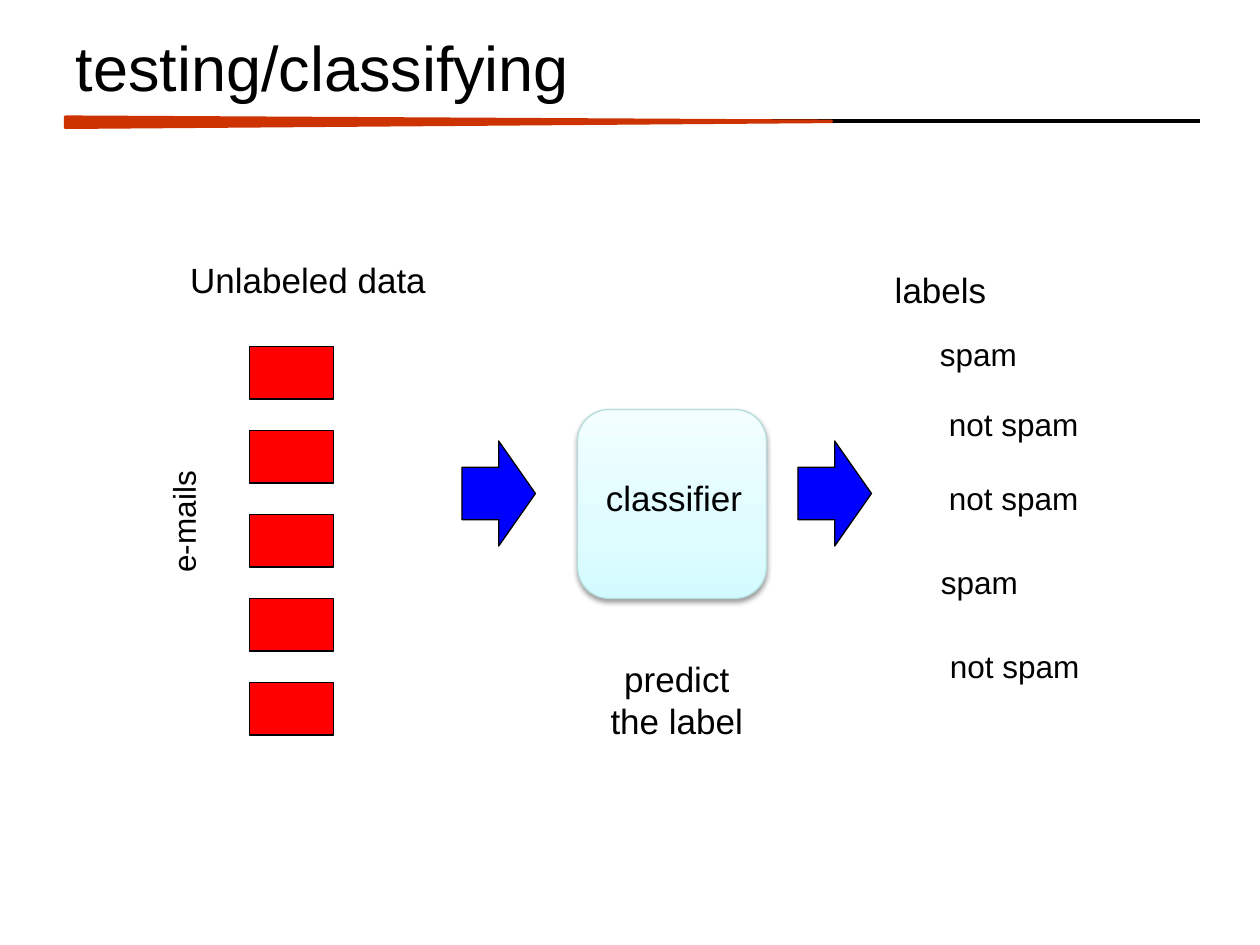
"""Build the slide that shows a classifier labelling unlabeled e-mails."""
from copy import deepcopy
from dataclasses import dataclass

from lxml.etree import SubElement
from pptx import Presentation
from pptx.dml.color import RGBColor
from pptx.enum.shapes import MSO_CONNECTOR as Connector, MSO_SHAPE as Preset
from pptx.enum.text import MSO_ANCHOR as Anchor, MSO_AUTO_SIZE as AutoSize, PP_ALIGN as Align
from pptx.oxml.ns import qn
from pptx.util import Inches, Length, Pt

BLACK = RGBColor(0x00, 0x00, 0x00)
RED = RGBColor(0xFF, 0x00, 0x00)
BLUE = RGBColor(0x00, 0x00, 0xFF)
RUST = RGBColor(0xCC, 0x33, 0x00)
AQUA_EDGE = RGBColor(0xB6, 0xDC, 0xDF)
AQUA_STOPS = (
    (0, RGBColor(0xD3, 0xFB, 0xFF)),
    (0.35, RGBColor(0xDF, 0xFC, 0xFF)),
    (1, RGBColor(0xF2, 0xFE, 0xFF)),
)
FONT = "Arial"
UNITS_PER_INCH = 12
EMAIL_COUNT = 5
EMAIL_PITCH = 8


@dataclass(frozen=True)
class Box:
    """Place on a grid of twelve units to the inch."""

    col: float
    row: float
    cols: float
    rows: float

    def emu(self) -> tuple[Length, ...]:
        """Return left, top, width and height as lengths."""
        return tuple(map(grid, (self.col, self.row, self.cols, self.rows)))


@dataclass(frozen=True)
class Caption:
    """Text with its place, size and rotation."""

    text: str
    box: Box
    size: int = 20
    rotation: int = 0


CAPTIONS = (
    Caption("Unlabeled data", Box(16.8, 24, 25.08, 5.25)),
    Caption("predict\nthe label", Box(56.9, 62, 15.12, 9.25)),
    Caption("labels", Box(84, 25, 11.16, 5.25)),
    Caption("e-mails", Box(10.32, 46.7, 15.48, 6), 18, 270),
)
PREDICTIONS = (
    ("spam", 87, 31.3),
    ("not spam", 87, 38),
    ("not spam", 87, 45),
    ("spam", 87.1, 53),
    ("not spam", 87.1, 61),
)
PREDICTION_COLS = {"spam": 12.36, "not spam": 19.08}
CLASSIFIER = Caption("classifier", Box(56.4, 44.8, 15.6, 5.25))


def grid(units: float) -> Length:
    """Turn grid units into a length."""
    return Inches(units / UNITS_PER_INCH)


def write(frame, text: str, *, size: int, align=Align.CENTER, anchor=Anchor.TOP,
          wrap: bool = False, fit=AutoSize.SHAPE_TO_FIT_TEXT) -> None:
    """Write one paragraph per line of text in the given format."""
    frame.text = text
    frame.word_wrap = wrap
    frame.auto_size = fit
    frame.vertical_anchor = anchor
    for paragraph in frame.paragraphs:
        paragraph.alignment = align
        font = paragraph.runs[0].font
        font.name, font.size = FONT, Pt(size)
        font.color.rgb = BLACK


def add_caption(shapes, caption: Caption) -> None:
    """Add a text box that grows with its text."""
    label = shapes.add_textbox(*caption.box.emu())
    label.rotation = caption.rotation
    write(label.text_frame, caption.text, size=caption.size)


def add_block(shapes, preset: Preset, box: Box, fill: RGBColor | None,
              edge: RGBColor = BLACK, edge_width: float = 0.75):
    """Add a preset shape without a shadow and return it."""
    block = shapes.add_shape(preset, *box.emu())
    block.shadow.inherit = False
    if fill is not None:
        block.fill.solid()
        block.fill.fore_color.rgb = fill
    block.line.color.rgb = edge
    block.line.width = Pt(edge_width)
    return block


def add_title(slide) -> None:
    """Place the title and the tapering rule under it."""
    title = slide.shapes.title
    title.left, title.top, title.width, title.height = Box(6, 2.04, 108, 8.64).emu()
    write(title.text_frame, "testing/classifying", size=36, align=Align.LEFT,
          anchor=Anchor.MIDDLE, wrap=True, fit=AutoSize.NONE)
    rule = slide.shapes.add_connector(
        Connector.STRAIGHT, *map(grid, (6.25, 11.55, 114.25, 11.55)))
    rule.line.color.rgb = BLACK
    rule.line.width = Pt(2)
    SubElement(rule.element.spPr, qn("a:effectLst"))
    taper = add_block(slide.shapes, Preset.ISOSCELES_TRIANGLE,
                      Box(42.24, -24.84, 0.96, 72.96), RUST, RUST, 2)
    taper.adjustments[0] = 0.417
    taper.rotation = 90


def add_classifier(slide) -> None:
    """Add the shaded classifier box grouped with its label."""
    group = slide.shapes.add_group_shape()
    body = add_block(group.shapes, Preset.ROUNDED_RECTANGLE,
                     Box(55, 39, 18, 18), None, AQUA_EDGE)
    body.fill.gradient()
    body.fill.gradient_angle = 90
    stop_list = body.element.spPr.find(qn("a:gradFill")).find(qn("a:gsLst"))
    stop_list.insert(1, deepcopy(stop_list[0]))
    for stop, (position, color) in zip(body.fill.gradient_stops, AQUA_STOPS):
        stop.position = position
        stop.color.rgb = color
    shadow = SubElement(body.element.spPr.find(qn("a:effectLst")), qn("a:outerShdw"),
                        blurRad=str(Pt(3.1)), dist=str(Pt(1.6)), dir="5400000",
                        rotWithShape="0")
    tint = SubElement(shadow, qn("a:srgbClr"), val=str(BLACK))
    SubElement(tint, qn("a:alpha"), val="38000")
    add_caption(group.shapes, CLASSIFIER)


def main() -> None:
    """Build and save the presentation."""
    deck = Presentation()
    deck.slide_width, deck.slide_height = Inches(10), Inches(7.5)
    slide = deck.slides.add_slide(deck.slide_layouts[5])
    add_title(slide)
    for index in range(EMAIL_COUNT):
        add_block(slide.shapes, Preset.RECTANGLE,
                  Box(23.75, 33 + index * EMAIL_PITCH, 8, 5), RED)
    for col in (44, 76):
        add_block(slide.shapes, Preset.RIGHT_ARROW, Box(col, 42, 7, 10), BLUE)
    add_classifier(slide)
    for caption in CAPTIONS:
        add_caption(slide.shapes, caption)
    for text, col, row in PREDICTIONS:
        add_caption(slide.shapes, Caption(text, Box(col, row, PREDICTION_COLS[text], 6), 18))
    deck.save("out.pptx")


if __name__ == "__main__":
    main()
